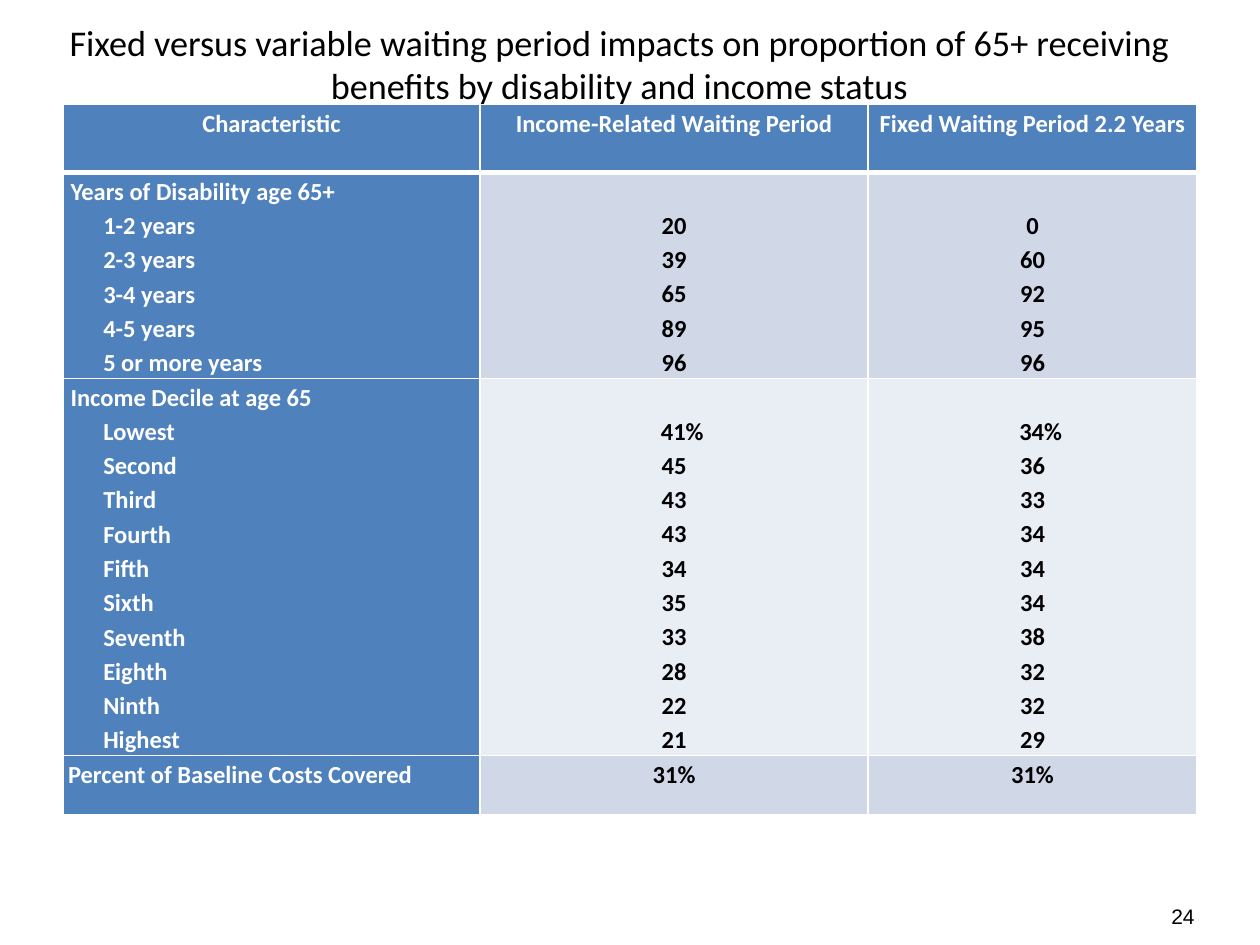
from lxml import etree
from pptx import Presentation
from pptx.dml.color import RGBColor
from pptx.enum.text import MSO_ANCHOR, MSO_AUTO_SIZE, PP_ALIGN
from pptx.oxml.ns import qn
from pptx.util import Inches, Pt

LEFT, CENTER, RIGHT = PP_ALIGN.LEFT, PP_ALIGN.CENTER, PP_ALIGN.RIGHT
MIDDLE = MSO_ANCHOR.MIDDLE
NO_AUTOFIT = MSO_AUTO_SIZE.NONE

COLORS = {
    "header": "4F81BD",
    "band": "D0D8E8",
    "light": "E9EDF4",
    "white": "FFFFFF",
    "black": "000000",
}
TITLE = ("Fixed versus variable waiting period impacts on proportion of 65+ "
         "receiving benefits by disability and income status")
HEADINGS = ["Characteristic", "Income-Related Waiting Period",
            "Fixed Waiting Period 2.2 Years"]
DISABILITY = [
    ("1-2 years", "20", "0"),
    ("2-3 years", "39", "60"),
    ("3-4 years", "65", "92"),
    ("4-5 years", "89", "95"),
    ("5 or more years", "96", "96"),
]
INCOME = [
    ("Lowest", "41%", "34%"),
    ("Second", "45", "36"),
    ("Third", "43", "33"),
    ("Fourth", "43", "34"),
    ("Fifth", "34", "34"),
    ("Sixth", "35", "34"),
    ("Seventh", "33", "38"),
    ("Eighth", "28", "32"),
    ("Ninth", "22", "32"),
    ("Highest", "21", "29"),
]
COSTS = ["Percent of Baseline Costs Covered", "31%", "31%"]
COLUMN_WIDTHS = [3.31, 3.08, 2.61]
ROW_HEIGHTS = [0.54, 1.63, 2.99, 0.47]
LINE_HEIGHT = 0.27
LABEL_INDENT = 0.26
PERCENT_INDENT = 0.13


def add_run(paragraph, text, size, color, font="Calibri", bold=False):
    """Append a formatted run to a paragraph."""
    run = paragraph.add_run()
    run.text = text
    run.font.name = font
    run.font.size = Pt(size)
    run.font.bold = bold
    run.font.color.rgb = RGBColor.from_string(COLORS[color])


def add_title(slide):
    """Place the slide heading in the title placeholder."""
    title = slide.shapes.title
    title.left, title.top = Inches(0.25), Inches(0.17)
    title.width, title.height = Inches(9.33), Inches(0.67)
    frame = title.text_frame
    frame.auto_size = NO_AUTOFIT
    frame.vertical_anchor = MIDDLE
    frame.paragraphs[0].alignment = CENTER
    add_run(frame.paragraphs[0], TITLE, 20.7, "black")


def add_page_number(slide):
    """Place the page number at the lower right."""
    page = slide.shapes.add_textbox(Inches(7.25), Inches(7.07),
                                    Inches(2.33), Inches(0.4))
    frame = page.text_frame
    frame.word_wrap = True
    frame.vertical_anchor = MIDDLE
    frame.paragraphs[0].alignment = RIGHT
    add_run(frame.paragraphs[0], "24", 12, "black", "Arial")


def set_borders(cell, top, bottom):
    """Draw white borders around a cell, with top and bottom widths in points."""
    properties = cell._tc.get_or_add_tcPr()
    for side, width in (("L", 1), ("R", 1), ("T", top), ("B", bottom)):
        line = etree.SubElement(properties, qn(f"a:ln{side}"), w=str(Pt(width)))
        fill = etree.SubElement(line, qn("a:solidFill"))
        etree.SubElement(fill, qn("a:srgbClr"), val=COLORS["white"])


def fill_cell(cell, lines, fill, color, alignment, margin, top=0):
    """Write (text, indent) lines into a cell and colour it."""
    cell.margin_left = cell.margin_right = Inches(margin)
    cell.margin_top, cell.margin_bottom = Inches(top), 0
    cell.fill.solid()
    cell.fill.fore_color.rgb = RGBColor.from_string(COLORS[fill])
    frame = cell.text_frame
    for index, (text, indent) in enumerate(lines):
        paragraph = frame.add_paragraph() if index else frame.paragraphs[0]
        paragraph.alignment = alignment
        paragraph.line_spacing = 1.15
        if indent:
            paragraph._p.get_or_add_pPr().set("marL", str(Inches(indent)))
        add_run(paragraph, text, 14, color, bold=True)


def fill_group(cells, heading, records, fill):
    """Fill a row with a headed group of labels and its two value columns."""
    labels, *value_columns = zip(*records)
    label_lines = [(heading, 0)] + [(label, LABEL_INDENT) for label in labels]
    fill_cell(cells[0], label_lines, "header", "white", LEFT, 0.06)
    for cell, values in zip(cells[1:], value_columns):
        lines = [(value, PERCENT_INDENT if "%" in value else 0)
                 for value in values]
        fill_cell(cell, lines, fill, "black", CENTER, 0.06, LINE_HEIGHT)


def add_impact_table(slide):
    """Build the table comparing the two waiting periods."""
    table = slide.shapes.add_table(
        len(ROW_HEIGHTS), len(COLUMN_WIDTHS), Inches(0.5), Inches(0.83),
        Inches(sum(COLUMN_WIDTHS)), Inches(sum(ROW_HEIGHTS))).table
    for column, width in zip(table.columns, COLUMN_WIDTHS):
        column.width = Inches(width)
    for index, (row, height) in enumerate(zip(table.rows, ROW_HEIGHTS)):
        row.height = Inches(height)
        for cell in row.cells:
            set_borders(cell, 3 if index == 1 else 1, 3 if index == 0 else 1)

    headings, disability, income, costs = (list(row.cells) for row in table.rows)
    for cell, heading in zip(headings, HEADINGS):
        fill_cell(cell, [(heading, 0)], "header", "white", CENTER, 0.04)
    fill_group(disability, "Years of Disability age 65+", DISABILITY, "band")
    fill_group(income, "Income Decile at age 65", INCOME, "light")
    fill_cell(costs[0], [(COSTS[0], 0)], "header", "white", LEFT, 0.04)
    for cell, share in zip(costs[1:], COSTS[1:]):
        fill_cell(cell, [(share, 0)], "band", "black", CENTER, 0.04)


def main():
    """Build and save the slide."""
    presentation = Presentation()
    presentation.slide_width = Inches(10)
    presentation.slide_height = Inches(7.5)
    slide = presentation.slides.add_slide(presentation.slide_layouts[5])
    add_title(slide)
    add_impact_table(slide)
    add_page_number(slide)
    presentation.save("out.pptx")


if __name__ == "__main__":
    main()
